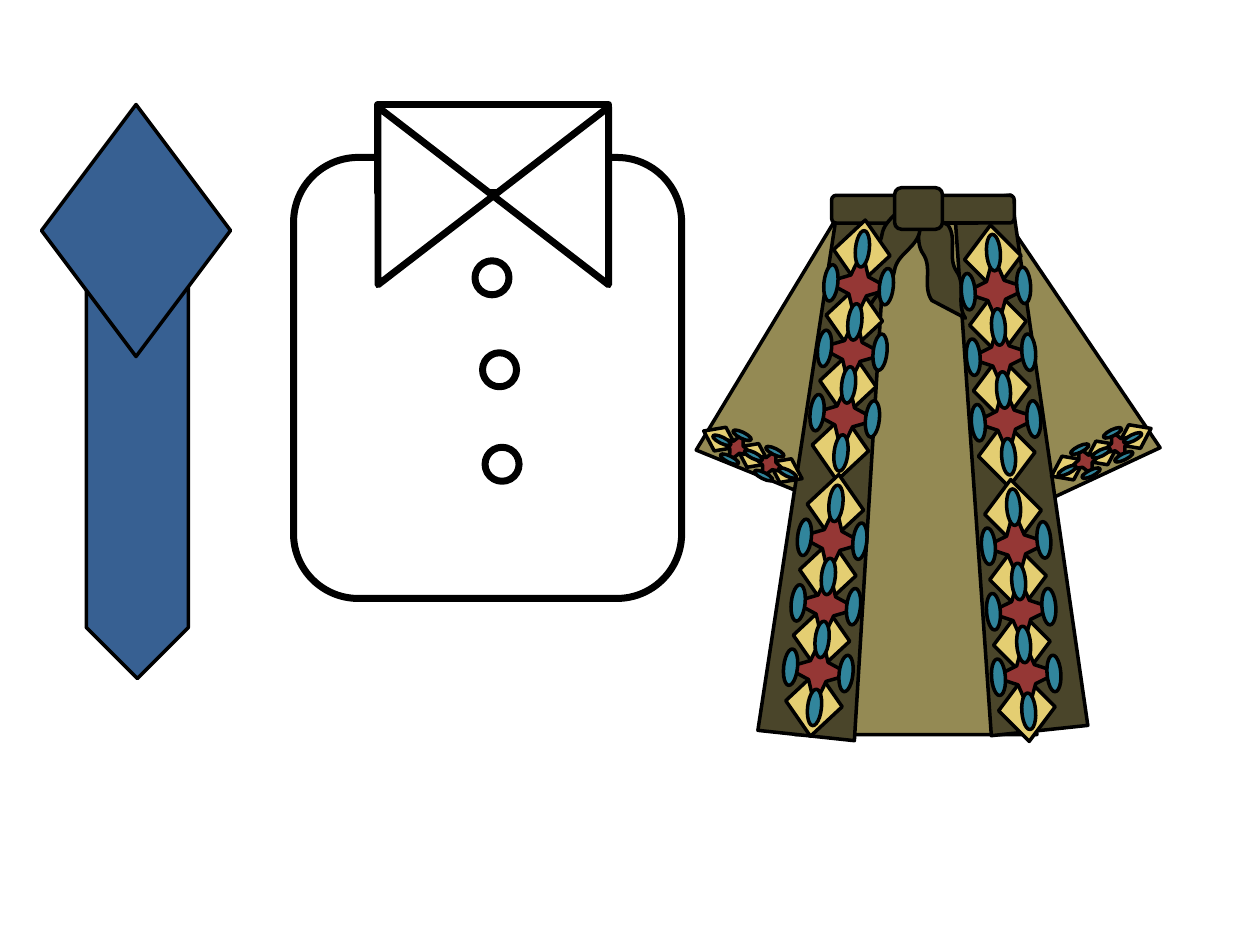
from math import cos, radians, sin

from pptx import Presentation
from pptx import util as u
from pptx.dml import color
from pptx.enum import shapes

THEME = {"blue": "376092", "white": "FFFFFF", "khaki": "948A54", "olive": "4A452A",
         "gold": "E4CE72", "red": "953735", "teal": "31859C", "ink": "000000"}
KIND = shapes.MSO_SHAPE


def draw(group, kind, box, fill, turn=0, adj=(), width=2):
    part = group.shapes.add_shape(kind, *[u.Inches(round(n, 2)) for n in box])
    part.rotation = turn
    part.shadow.inherit = False
    for spot, value in enumerate(adj):
        part.adjustments[spot] = value
    part.fill.solid()
    part.line.fill.solid()
    formats = [(part.fill.fore_color, {"rgb": color.RGBColor.from_string(THEME[fill])}),
               (part.line.color, {"rgb": color.RGBColor.from_string(THEME["ink"])}),
               (part.line, {"width": u.Pt(width)})]
    for target, values in formats:
        for name, value in values.items():
            setattr(target, name, value)


def trim(group, x, y, turn, count, along=1, across=1):
    angle = radians(turn)
    gems = [(KIND.FLOWCHART_DECISION, 0.52, 0.45, "gold", (), 0.52 * i, 0)
            for i in range(count)]
    gems += [(KIND.STAR_4_POINT, 0.55, 0.51, "red", (0.194,), 0.26 + 0.52 * i, 0.01)
             for i in range(count - 1)]
    beads = [(step, 0.01) for step in (-0.03, 0.51, 1.01, 1.6)[:count]]
    for side, gap in ((-0.21, 0.52), (0.23, 0.53)):
        beads += [(0.26 + gap * i, side) for i in range(count - 1)]
    gems += [(KIND.OVAL, 0.29, 0.11, "teal", (), *bead) for bead in beads]
    for kind, wide, high, fill, adj, far, side in gems:
        far, side = far * along, side * across
        wide, high = wide * abs(along), high * across
        left = x + far * cos(angle) - side * sin(angle) - wide / 2
        top = y + far * sin(angle) + side * cos(angle) - high / 2
        draw(group, kind, (left, top, wide, high), fill, turn, adj)


deck = Presentation()
deck.slide_width, deck.slide_height = u.Inches(10), u.Inches(7.5)
slide = deck.slides.add_slide(deck.slide_layouts[6])
tie, shirt, robe = [slide.shapes.add_group_shape() for _ in range(3)]

draw(tie, KIND.PENTAGON, (-0.6, 3.29, 3.38, 0.81), "blue", 90)
draw(tie, KIND.DIAMOND, (0.33, 0.83, 1.5, 2), "blue")

for kind, box, turn in [
    (KIND.ROUNDED_RECTANGLE, (2.33, 1.25, 3.08, 3.5), 0),
    (KIND.RECTANGLE, (3, 0.83, 1.83, 0.7), 0),
    (KIND.FLOWCHART_COLLATE, (3.21, 0.64, 1.41, 1.83), 90),
    (KIND.OVAL, (3.77, 2.07, 0.27, 0.27), 0),
    (KIND.OVAL, (3.83, 2.8, 0.27, 0.27), 0),
    (KIND.OVAL, (3.85, 3.55, 0.27, 0.27), 0),
]:
    draw(shirt, kind, box, "white", turn, width=4)

for kind, box, fill, turn, adj in [
    (KIND.TRAPEZOID, (6.31, 1.67, 1.92, 4.16), "khaki", 0, (0.341,)),
    (KIND.TRAPEZOID, (7.69, 1.58, 1.08, 2.31), "khaki", 335, (0.341,)),
    (KIND.TRAPEZOID, (5.92, 1.55, 1.08, 2.31), "khaki", 22.1, (0.341,)),
    (KIND.TRAPEZOID, (6.24, 1.58, 0.77, 4.27), "olive", 6.1, (0.249,)),
    (KIND.TRAPEZOID, (7.64, 1.56, 0.77, 4.25), "olive", 353.9, (0.203,)),
    (KIND.ROUNDED_RECTANGLE, (6.6, 1.55, 1.45, 0.22), "olive", 0, ()),
    (KIND.DOUBLE_WAVE, (6.99, 1.95, 0.94, 0.27), "olive", 259.4, (0.062, -0.1)),
    (KIND.DOUBLE_WAVE, (6.58, 1.87, 0.94, 0.27), "olive", 302.4, (0.062, -0.1)),
    (KIND.ROUNDED_RECTANGLE, (7.1, 1.49, 0.38, 0.33), "olive", 0, ()),
]:
    draw(robe, kind, box, fill, turn, adj)

for x, y, turn in [(7.99, 3.6, 265.9), (8.15, 5.62, 265.9),
                   (6.67, 3.56, 276.1), (6.46, 5.58, 276.1)]:
    trim(robe, x, y, turn, 4)
trim(robe, 8.48, 3.72, 333.7, 3, 0.56, 0.47)
trim(robe, 6.24, 3.74, 26.3, 3, -0.56, 0.47)

deck.save("out.pptx")
